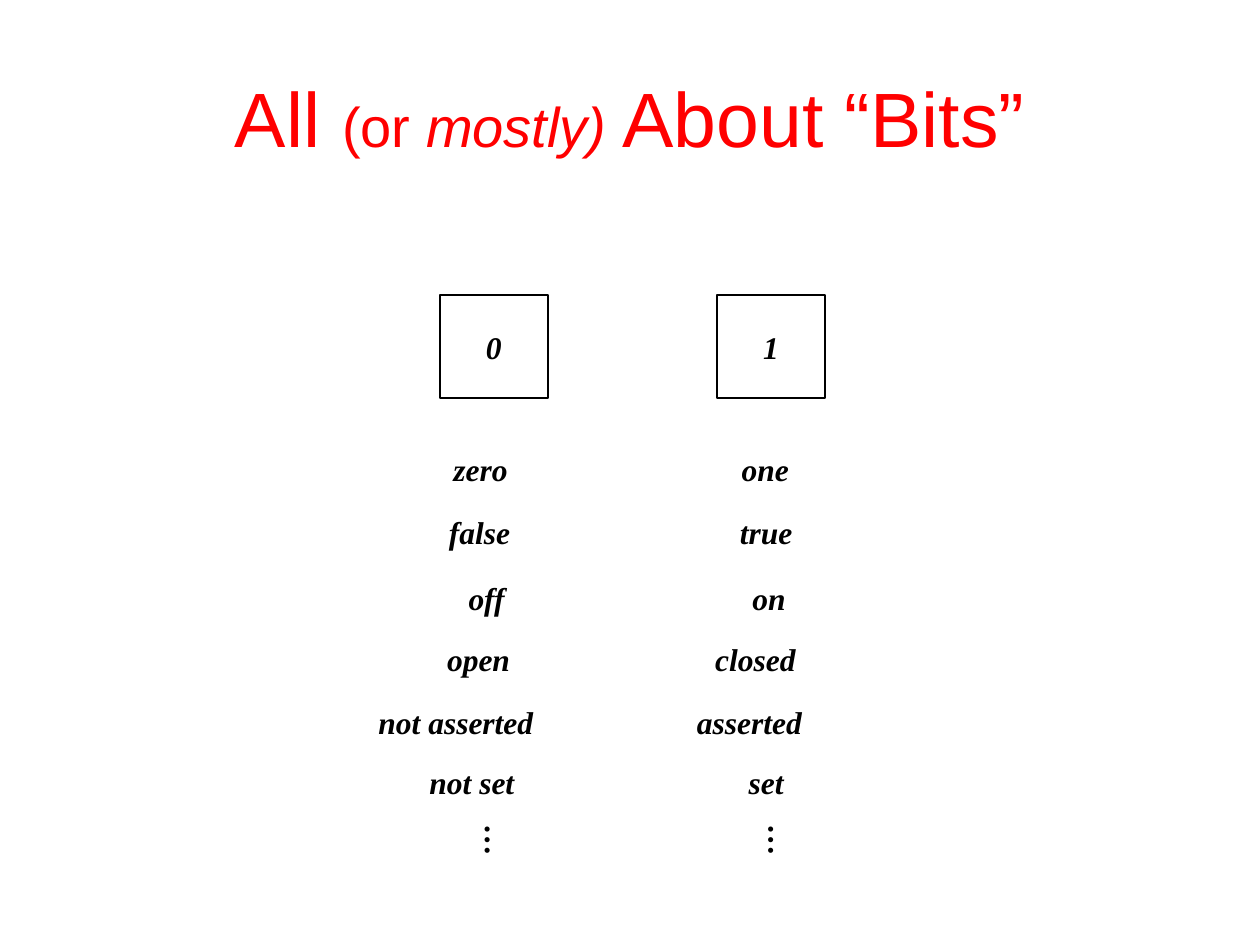
from pptx import Presentation
from pptx.dml.color import RGBColor
from pptx.enum import shapes, text
from pptx.util import Inches, Pt

COLORS = {"title": "FF0000", "ink": "000000", "paper": "FFFFFF"}

# Each bit: value, box left, centre of its meanings, (meaning, width) per row
BITS = [
    ("0", 3.49, 3.915, [("zero", 0.83), ("false", 0.9), ("off", 0.59), ("open", 0.93),
                        ("not asserted", 2.02), ("not set", 1.21), ("…", 0.51)]),
    ("1", 5.69, 6.163, [("one", 0.75), ("true", 0.78), ("on", 0.58), ("closed", 1.17),
                        ("asserted", 1.46), ("set", 0.64), ("…", 0.51)]),
]
ROW_TOPS = [3.52, 4.02, 4.55, 5.03, 5.53, 6.01, 6.47]


def format_run(run, size, font, color, bold=False, italic=False):
    run.font.size = Pt(size)
    run.font.name = font
    run.font.color.rgb = RGBColor.from_string(COLORS[color])
    run.font.bold = bold
    run.font.italic = italic


def write_term(frame, term):
    frame.text = term
    format_run(frame.paragraphs[0].runs[0], 18, "Times New Roman", "ink", True, True)


prs = Presentation()
prs.slide_width, prs.slide_height = Inches(10), Inches(7.5)
slide = prs.slides.add_slide(prs.slide_layouts[6])

title = slide.shapes.add_textbox(Inches(0.5), Inches(0.3), Inches(9), Inches(1.25)).text_frame
title.word_wrap = True
title.vertical_anchor = text.MSO_ANCHOR.MIDDLE
heading = title.paragraphs[0]
heading.alignment = text.PP_ALIGN.CENTER
for words, size, italic in [("All ", 44, False), ("(or ", 32, False),
                            ("mostly) ", 32, True), ("About “Bits”", 44, False)]:
    run = heading.add_run()
    run.text = words
    format_run(run, size, "Arial", "title", italic=italic)

for value, box_left, center, meanings in BITS:
    bit = slide.shapes.add_shape(shapes.MSO_SHAPE.RECTANGLE, Inches(box_left), Inches(2.34),
                                 Inches(0.86), Inches(0.82))
    bit.shadow.inherit = False
    bit.fill.solid()
    bit.fill.fore_color.rgb = RGBColor.from_string(COLORS["paper"])
    bit.line.color.rgb = RGBColor.from_string(COLORS["ink"])
    bit.line.width = Pt(1)
    write_term(bit.text_frame, value)
    bit.text_frame.vertical_anchor = text.MSO_ANCHOR.MIDDLE
    bit.text_frame.paragraphs[0].alignment = text.PP_ALIGN.CENTER

    for top, (meaning, width) in zip(ROW_TOPS, meanings):
        label = slide.shapes.add_textbox(Inches(center - width / 2), Inches(top),
                                         Inches(width), Inches(0.47))
        label.text_frame.word_wrap = True
        write_term(label.text_frame, meaning)
        if meaning == "…":
            label.rotation = 90

prs.save("out.pptx")
